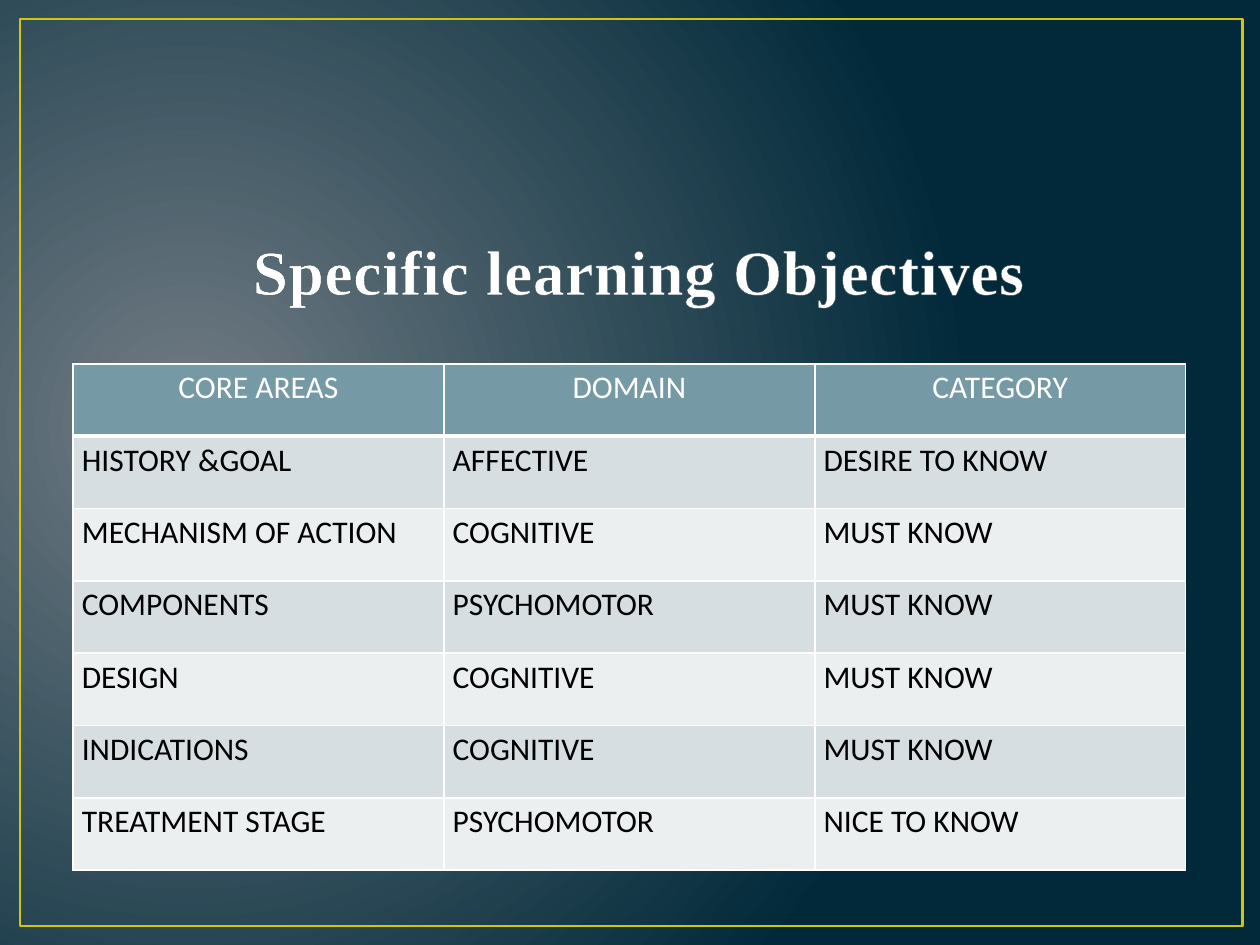
from lxml.etree import SubElement as Sub
from pptx import Presentation
from pptx.dml.color import RGBColor
from pptx.enum.shapes import MSO_SHAPE as Kind
from pptx.enum.text import MSO_ANCHOR as Anchor, MSO_AUTO_SIZE as Fit, PP_ALIGN as Align
from pptx.oxml.ns import qn
from pptx.util import Inches, Pt

WHITE = RGBColor(0xFF, 0xFF, 0xFF)
BLACK = RGBColor(0x00, 0x00, 0x00)
GREY = RGBColor(0x71, 0x7C, 0x84)
NAVY = RGBColor(0x01, 0x29, 0x3A)
GOLD = RGBColor(0xCF, 0xC6, 0x0D)
SLATE = RGBColor(0x38, 0x4F, 0x55)
TEAL = RGBColor(0x75, 0x9A, 0xA5)
BANDS = [RGBColor(0xEC, 0xEF, 0xF0), RGBColor(0xD6, 0xDE, 0xE1)]

ROWS = [
    ("CORE AREAS", "DOMAIN", "CATEGORY"),
    ("HISTORY &GOAL", "AFFECTIVE", "DESIRE TO KNOW"),
    ("MECHANISM OF ACTION", "COGNITIVE", "MUST KNOW"),
    ("COMPONENTS", "PSYCHOMOTOR", "MUST KNOW"),
    ("DESIGN", "COGNITIVE", "MUST KNOW"),
    ("INDICATIONS", "COGNITIVE", "MUST KNOW"),
    ("TREATMENT STAGE", "PSYCHOMOTOR", "NICE TO KNOW"),
]


def style(item, looks):
    for key, val in looks.items():
        setattr(item, key, val)


def rule(props, tag, width, color, spot):
    line = Sub(props, qn(tag), w=str(Pt(width)))
    fill = Sub(line, qn("a:solidFill"))
    Sub(fill, qn("a:srgbClr"), val=str(color))
    props.insert(spot, line)


deck = Presentation()
W, H = Inches(10), Inches(7.5)
style(deck, {"slide_width": W, "slide_height": H})
slide = deck.slides.add_slide(deck.slide_layouts[5])

back = slide.background.fill
back.gradient()
for stop, color in zip(back.gradient_stops, (GREY, NAVY)):
    stop.color.rgb = color
grad = slide.element.find(".//" + qn("a:gradFill"))
grad.remove(grad.find(qn("a:lin")))
glow = Sub(grad, qn("a:path"), path="circle")
Sub(glow, qn("a:fillToRect"), l="15000", t="50000", r="85000", b="60000")

frame = slide.shapes.add_shape(
    Kind.RECTANGLE, int(W * 0.016), int(H * 0.02), int(W * 0.97), int(H * 0.96))
frame.shadow.inherit = False
frame.fill.background()
frame.line.color.rgb = GOLD
frame.line.width = Pt(1.5)

title = slide.shapes.title
title.element.addprevious(frame.element)
style(title, {"left": int(W * 0.134), "top": int(H * 0.212),
              "width": int(W * 0.76), "height": int(H * 0.12)})
style(title.text_frame, {"text": "Specific learning Objectives ", "word_wrap": True,
                         "auto_size": Fit.NONE, "vertical_anchor": Anchor.BOTTOM})
head = title.text_frame.paragraphs[0]
head.alignment = Align.CENTER
run = head.runs[0]
style(run.font, {"name": "Times New Roman", "size": Pt(36), "bold": True})
run.font.color.rgb = WHITE
props = run.font.fill and run._r.get_or_add_rPr()
props.set("spc", "50")
rule(props, "a:ln", 1.05, SLATE, 0)

table = slide.shapes.add_table(
    len(ROWS), len(ROWS[0]), int(W * 0.058), int(H * 0.385),
    int(W * 0.883), int(H * 0.536)).table
for r, words in enumerate(ROWS):
    top = r == 0
    for c, word in enumerate(words):
        cell = table.cell(r, c)
        style(cell, {"text": word, "margin_left": Inches(0.07), "margin_right": Inches(0.07),
                     "margin_top": Inches(0.04), "margin_bottom": Inches(0.04)})
        cell.fill.solid()
        cell.fill.fore_color.rgb = TEAL if top else BANDS[r % 2]
        para = cell.text_frame.paragraphs[0]
        para.alignment = Align.CENTER if top else Align.LEFT
        font = para.runs[0].font
        style(font, {"name": "Calibri", "size": Pt(18), "bold": False})
        font.color.rgb = WHITE if top else BLACK
        edge = cell.fill and cell._tc.get_or_add_tcPr()
        for spot, side in enumerate("LRTB"):
            rule(edge, "a:ln" + side, 3 if top and side == "B" else 1, WHITE, spot)

deck.save("out.pptx")
